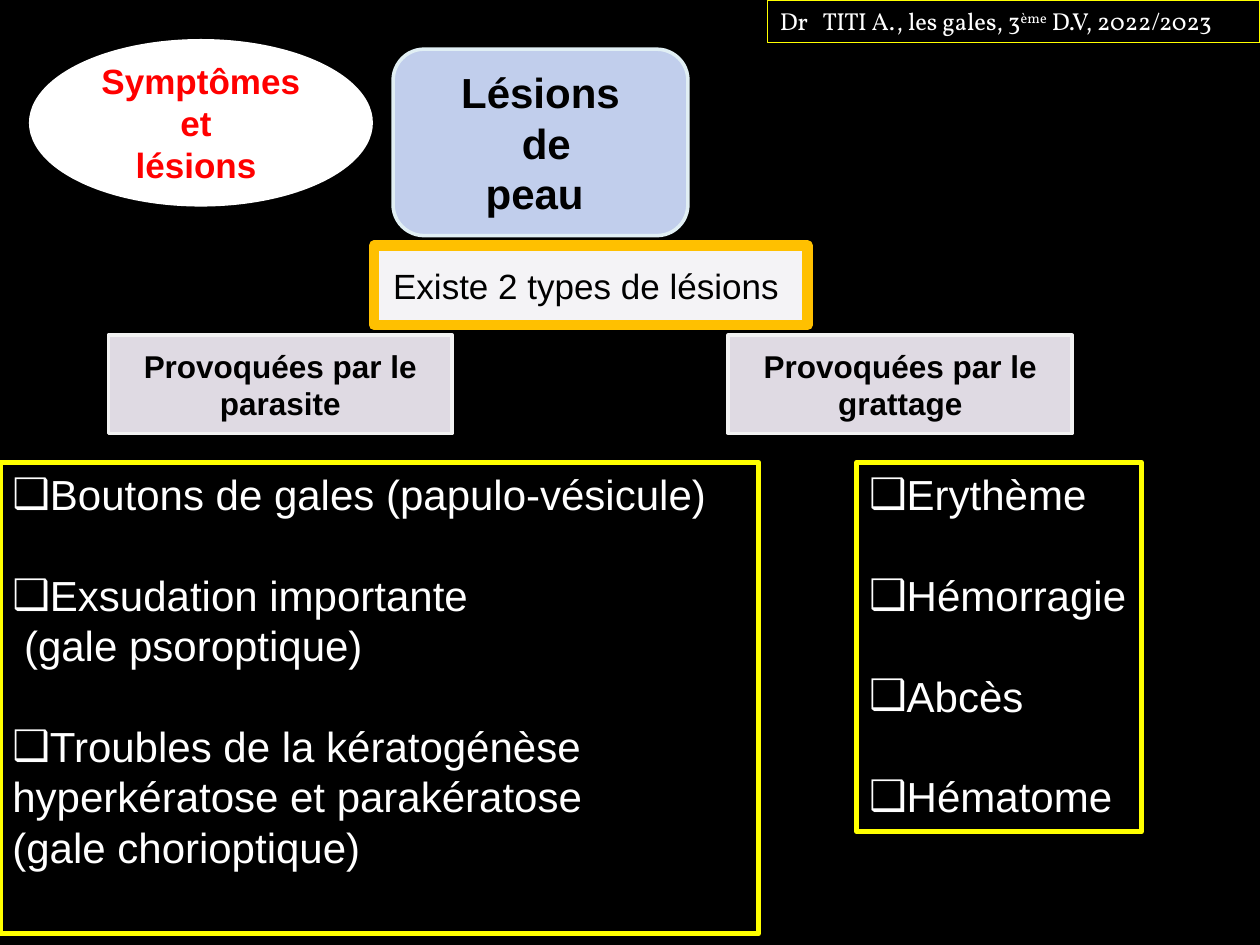
from lxml.etree import SubElement
from pptx import Presentation
from pptx.dml.color import RGBColor
from pptx.enum.shapes import MSO_SHAPE as Shape
from pptx.enum.text import MSO_ANCHOR as Anchor, PP_ALIGN as Align
from pptx.oxml.ns import qn
from pptx.util import Inches, Pt

WIDTH, HEIGHT = Inches(10), Inches(7.5)
COLORS = {
    "black": "000000", "white": "FFFFFF", "red": "FF0000", "yellow": "FFFF00",
    "blue": "C1CEEC", "pale blue": "E1EFF4", "pale grey": "F4F3F6",
    "orange": "FFC000", "lilac": "DFDAE3", "light grey": "F2F2F2",
}
BULLET = "❑"
ITEM_GAP = 28.8  # one line of 24 pt text

# Places are left, top, width, height in percent of the slide.
TITLES = [
    (Shape.OVAL, (2.3, 4.13, 27.3, 17.73), "white", None,
     ["Symptômes", "et ", "lésions "], dict(size=20, color="red", bold=True)),
    (Shape.ROUNDED_RECTANGLE, (31.2, 5.2, 23.4, 19.73), "blue", ("pale blue", 2),
     ["Lésions", " de", "peau "], dict(size=24, bold=True)),
    (Shape.RECTANGLE, (29.7, 26, 34.4, 8.4), "pale grey", ("orange", 6),
     ["Existe 2 types de lésions "], dict(size=20)),
]
CAUSES = [(8.6, "Provoquées par le parasite"), (57.8, "Provoquées par le grattage")]
CAUSE_TOP, CAUSE_WIDTH, CAUSE_HEIGHT = 35.47, 27.3, 10.4

# Each item is a bulleted line followed by its plain lines.
LISTS = [
    (0, 60.2, 49.87, True, [
        ["Boutons de gales (papulo-vésicule)"],
        ["Exsudation importante", " (gale psoroptique)"],
        ["Troubles de la kératogénèse", "hyperkératose et parakératose",
         "(gale chorioptique)"],
    ]),
    (68, 22.6, 39.07, False, [["Erythème"], ["Hémorragie"], ["Abcès"], ["Hématome"]]),
]
LIST_TOP = 48.93

HEADER_PLACE = (60.9, 0, 39.1, 4.53)
HEADER = [("Dr\tTITI A., les gales, 3", 0), ("ème", 30), (" D.V, 2022/2023", 0)]
HEADER_TAB = Inches(0.34)


def rgb(name):
    return RGBColor.from_string(COLORS[name])


def add_box(page, kind, place, fill=None, line=None, anchor=Anchor.MIDDLE, wrap=True):
    left, top, width, height = place
    box = page.shapes.add_shape(
        kind, round(WIDTH * left / 100), round(HEIGHT * top / 100),
        round(WIDTH * width / 100), round(HEIGHT * height / 100))
    box.shadow.inherit = False
    if fill:
        box.fill.solid()
        box.fill.fore_color.rgb = rgb(fill)
    else:
        box.fill.background()
    if line:
        color, points = line
        box.line.color.rgb = rgb(color)
        box.line.width = Pt(points)
    else:
        box.line.fill.background()
    box.text_frame.word_wrap = wrap
    box.text_frame.vertical_anchor = anchor
    return box


def add_span(para, text, size=24, color="black", bold=False, font="Arial", raised=0):
    span = para.add_run()
    span.text = text
    span.font.name, span.font.size, span.font.bold = font, Pt(size), bold
    span.font.color.rgb = rgb(color)
    if raised:
        span.font._element.set("baseline", str(raised * 1000))


def add_para(box, align=Align.LEFT, gap=0):
    """Return the box's empty first paragraph, or a new one after the others."""
    first = box.text_frame.paragraphs[0]
    para = box.text_frame.add_paragraph() if first.runs else first
    para.alignment = align
    para.space_before = Pt(gap)
    return para


def set_bullet(para):
    props = para._p.get_or_add_pPr()
    props.set("marL", "0")
    props.set("indent", "0")
    SubElement(props, qn("a:buFont"), typeface="Arial")
    SubElement(props, qn("a:buChar"), char=BULLET)


def add_title(page, kind, place, fill, line, lines, style):
    box = add_box(page, kind, place, fill, line)
    for text in lines:
        add_span(add_para(box, Align.CENTER), text, **style)


def add_list(page, left, width, height, wrap, items):
    box = add_box(page, Shape.RECTANGLE, (left, LIST_TOP, width, height),
                  line=("yellow", 3), anchor=Anchor.TOP, wrap=wrap)
    for number, lines in enumerate(items):
        for row, text in enumerate(lines):
            para = add_para(box, gap=ITEM_GAP if number and row == 0 else 0)
            if row == 0:
                set_bullet(para)
            add_span(para, text, color="white")


def add_header(page):
    box = add_box(page, Shape.RECTANGLE, HEADER_PLACE, line=("yellow", 0.75),
                  anchor=Anchor.TOP)
    para = add_para(box)
    tabs = SubElement(para._p.get_or_add_pPr(), qn("a:tabLst"))
    SubElement(tabs, qn("a:tab"), pos=str(HEADER_TAB), algn="l")
    for text, raised in HEADER:
        add_span(para, text, size=14, color="white", font="Vollkorn", raised=raised)


def main():
    deck = Presentation()
    deck.slide_width, deck.slide_height = WIDTH, HEIGHT
    page = deck.slides.add_slide(deck.slide_layouts[6])
    page.background.fill.solid()
    page.background.fill.fore_color.rgb = rgb("black")
    for title in TITLES:
        add_title(page, *title)
    for left, text in CAUSES:
        add_title(page, Shape.RECTANGLE, (left, CAUSE_TOP, CAUSE_WIDTH, CAUSE_HEIGHT),
                  "lilac", ("light grey", 2), [text], dict(size=18, bold=True))
    for entry in LISTS:
        add_list(page, *entry)
    add_header(page)
    deck.save("out.pptx")


if __name__ == "__main__":
    main()
